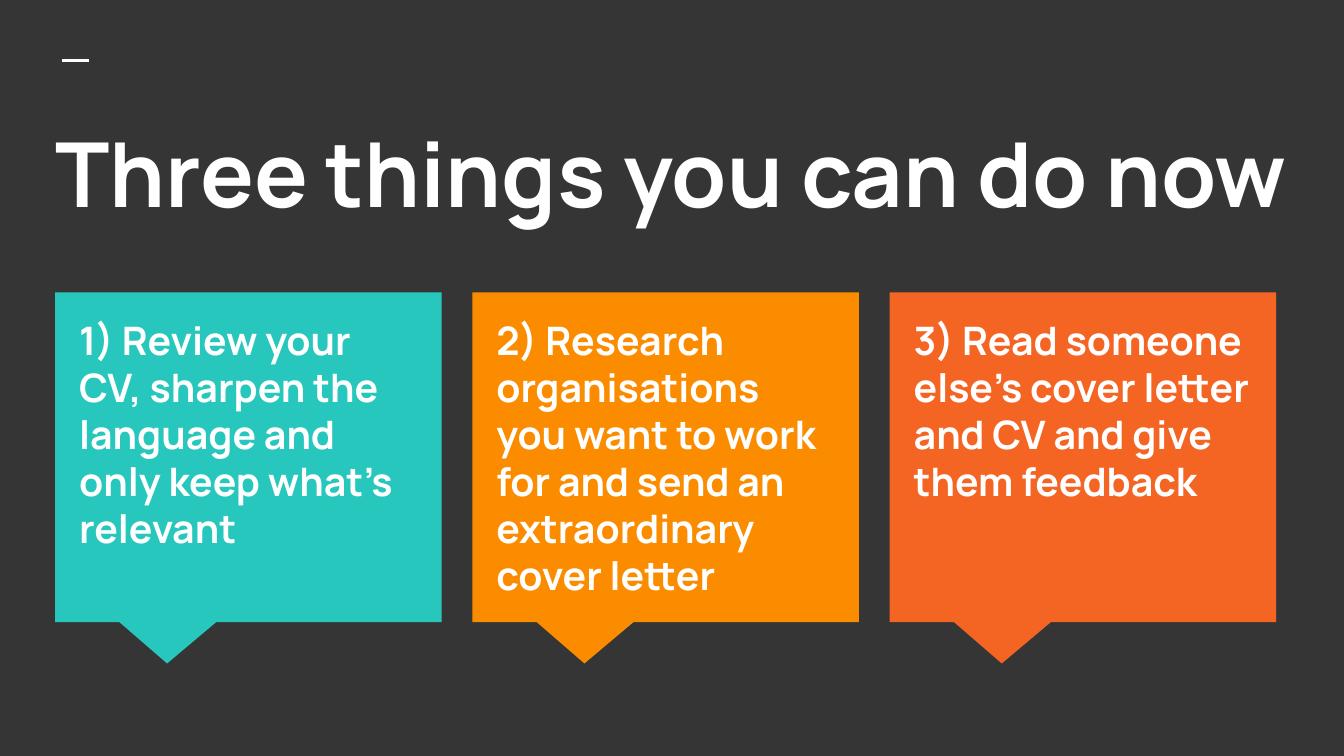
import dataclasses

import lxml.etree
import pptx
import pptx.dml.color
import pptx.enum.shapes
import pptx.enum.text
import pptx.oxml.ns
import pptx.presentation
import pptx.shapes.base
import pptx.slide
import pptx.text.text
import pptx.util

EMU_PER_PX = 4572
FONT = "Manrope"
WHITE = pptx.dml.color.RGBColor(0xFF, 0xFF, 0xFF)
CHARCOAL = pptx.dml.color.RGBColor(0x35, 0x35, 0x35)
TEAL = pptx.dml.color.RGBColor(0x27, 0xC7, 0xBD)
AMBER = pptx.dml.color.RGBColor(0xFB, 0x8C, 0x00)
ORANGE = pptx.dml.color.RGBColor(0xF4, 0x65, 0x24)


@dataclasses.dataclass(frozen=True)
class Box:
    left: int
    top: int
    width: int
    height: int

    def shifted(self, distance: int) -> "Box":
        return dataclasses.replace(self, left=self.left + distance)

    def lengths(self) -> list[pptx.util.Emu]:
        return [px(value) for value in dataclasses.astuple(self)]


@dataclasses.dataclass(frozen=True)
class Card:
    text: str
    color: pptx.dml.color.RGBColor


TITLE_BOX = Box(62, 156, 1886, 224)
CALLOUT_BOX = Box(82, 435, 575, 491)
CARD_TEXT_BOX = Box(98, 450, 542, 438)
CARD_STEP = 621
CARDS = [
    Card("1) Review your CV, sharpen the language and only keep what’s relevant", TEAL),
    Card(
        "2) Research organisations you want to work for and send an extraordinary cover letter",
        AMBER,
    ),
    Card("3) Read someone else’s cover letter and CV and give them feedback", ORANGE),
]


def px(value: int) -> pptx.util.Emu:
    return pptx.util.Emu(value * EMU_PER_PX)


def write_text(
    frame: pptx.text.text.TextFrame, text: str, size: int, space_after: int = 0
) -> None:
    frame.word_wrap = True
    frame.auto_size = pptx.enum.text.MSO_AUTO_SIZE.NONE
    frame.vertical_anchor = pptx.enum.text.MSO_ANCHOR.TOP
    frame.margin_left = frame.margin_right = px(20)
    frame.margin_top = frame.margin_bottom = px(20)
    paragraph = frame.paragraphs[0]
    paragraph.alignment = pptx.enum.text.PP_ALIGN.LEFT
    paragraph.space_after = pptx.util.Pt(space_after)
    run = paragraph.add_run()
    run.text = text
    run.font.name = FONT
    run.font.size = pptx.util.Pt(size)
    run.font.bold = True
    run.font.color.rgb = WHITE


def draw_title(slide: pptx.slide.Slide) -> None:
    title = slide.shapes.title
    title.left, title.top, title.width, title.height = TITLE_BOX.lengths()
    write_text(title.text_frame, "Three things you can do now", 48)


def draw_dash(slide: pptx.slide.Slide) -> None:
    dash = slide.shapes.add_connector(
        pptx.enum.shapes.MSO_CONNECTOR.STRAIGHT, px(93), px(90), px(133), px(90)
    )
    dash.line.color.rgb = WHITE
    dash.line.width = pptx.util.Pt(1.5)
    properties = dash._element.spPr
    lxml.etree.SubElement(properties, pptx.oxml.ns.qn("a:effectLst"))


def draw_card(slide: pptx.slide.Slide, card: Card, distance: int) -> None:
    callout = slide.shapes.add_shape(
        pptx.enum.shapes.MSO_SHAPE.RECTANGULAR_CALLOUT,
        *CALLOUT_BOX.shifted(distance).lengths(),
    )
    callout.adjustments[0] = -0.21
    callout.adjustments[1] = 0.625
    callout.shadow.inherit = False
    callout.fill.solid()
    callout.fill.fore_color.rgb = card.color
    callout.line.fill.background()
    text_box = slide.shapes.add_textbox(*CARD_TEXT_BOX.shifted(distance).lengths())
    write_text(text_box.text_frame, card.text, 21, space_after=12)


def main() -> None:
    presentation = pptx.Presentation()
    presentation.slide_width = px(2000)
    presentation.slide_height = px(1125)
    slide = presentation.slides.add_slide(presentation.slide_layouts[5])
    slide.background.fill.solid()
    slide.background.fill.fore_color.rgb = CHARCOAL
    draw_dash(slide)
    draw_title(slide)
    for index, card in enumerate(CARDS):
        draw_card(slide, card, index * CARD_STEP)
    presentation.save("out.pptx")


if __name__ == "__main__":
    main()
